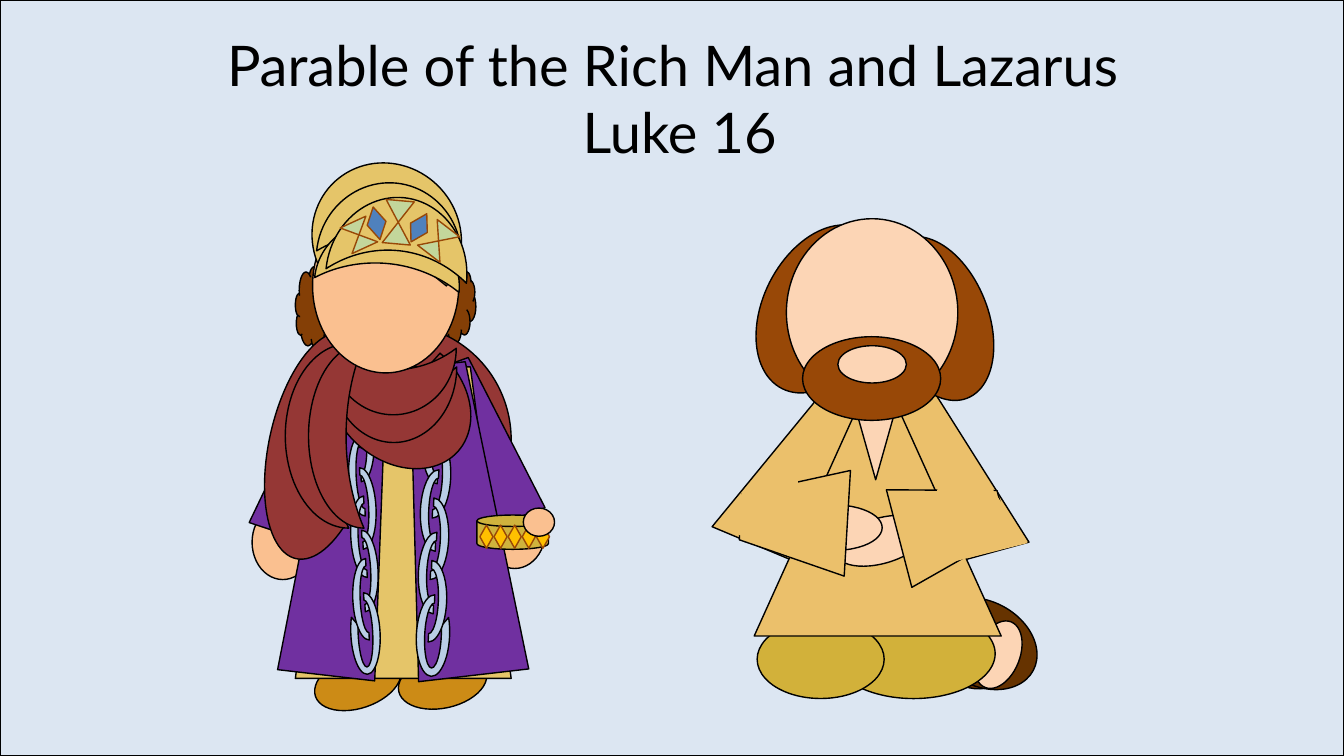
"""Build the title slide for the Parable of the Rich Man and Lazarus."""
from pptx import Presentation
from pptx.dml.color import RGBColor
from pptx.enum.shapes import MSO_SHAPE
from pptx.enum.text import PP_ALIGN
from pptx.util import Inches, Pt

OVAL, TRAPEZOID, TRIANGLE = MSO_SHAPE.OVAL, MSO_SHAPE.TRAPEZOID, MSO_SHAPE.ISOSCELES_TRIANGLE
MOON, PIE, ARC, CLOUD = MSO_SHAPE.MOON, MSO_SHAPE.PIE, MSO_SHAPE.BLOCK_ARC, MSO_SHAPE.CLOUD
DIAMOND, COLLATE = MSO_SHAPE.DIAMOND, MSO_SHAPE.FLOWCHART_COLLATE
DISK, RECTANGLE = MSO_SHAPE.FLOWCHART_MAGNETIC_DISK, MSO_SHAPE.RECTANGLE
CENTER = PP_ALIGN.CENTER

WIDTH, HEIGHT = 13.33, 7.5
THEME = {
    "sky": "DCE6F2", "ink": "000000", "trim": "984807", "curls": "843F06", "shoe": "CC8B16",
    "tan": "FAC090", "scarf": "953735", "purple": "7030A0", "linen": "E5C569", "silver": "B9CDE5",
    "lime": "C3D69B", "sapphire": "4F81BD", "brass": "CFB33D", "gold": "FFC000",
    "sandal": "663300", "skin": "FCD5B5", "tunic": "EBC06B", "knee": "D2B13A", "beard": "984807",
    "font": "Lato", "title_size": 40, "line_width": 1,
}
JEWELS = {"lime", "sapphire", "gold"}
TITLE_LINES = ["Parable of the Rich Man and Lazarus", " Luke 16"]
TITLE_BOX = (1.67, 0.25, 10, 1.45)

CRESCENT = {"adjust": [0.677]}
FLARE = {"adjust": [0.342]}
CUFF = {"adjust": [0.284]}
PATCH = {"adjust": [0.342], "outline": False}
MIRROR = {"mirror": True}

BODY = [
    (CLOUD, "curls", 2.93, 2.62, 0.43, 0.86, 0, {}),
    (CLOUD, "curls", 4.29, 2.69, 0.43, 0.72, 0, {}),
    (OVAL, "shoe", 4.13, 6.32, 0.52, 0.89, 77.7, {}),
    (OVAL, "shoe", 3.29, 6.32, 0.52, 0.89, 71.2, {}),
    (OVAL, "tan", 2.5, 5.01, 0.61, 0.74, 0, {}),
    (OVAL, "tan", 4.8, 4.9, 0.61, 0.74, 0, {}),
    (OVAL, "scarf", 2.76, 3.21, 2.31, 2.3, 0, {}),
    (TRAPEZOID, "purple", 4.3, 3.57, 0.85, 1.66, 340.2, {}),
    (TRAPEZOID, "purple", 2.71, 3.7, 0.85, 1.66, 18.3, {}),
    (TRAPEZOID, "linen", 2.93, 3.64, 2.14, 3.09, 0, {"adjust": [0.189]}),
]
RIGHT_ROBE = [(TRAPEZOID, "purple", 3.97, 3.61, 1.1, 3.1, 353.4, {})]
LEFT_ROBE = [(TRAPEZOID, "purple", 2.93, 3.59, 0.97, 3.12, 6.6, MIRROR)]
SCARF_AND_HEAD = [
    (TRAPEZOID, "tan", 3.58, 3.64, 0.68, 0.22, 180, {}),
    (PIE, "scarf", 3.35, 3.18, 1.22, 1.56, 311.6, {}),
    (MOON, "scarf", 3.53, 3.39, 0.75, 1.25, 270, CRESCENT),
    (MOON, "scarf", 3.57, 3.16, 0.66, 1.25, 270, CRESCENT),
    (PIE, "scarf", 2.67, 3.27, 1.03, 2.3, 12.5, {"adjust": [30.576, 162]}),
    (MOON, "scarf", 2.83, 3.41, 0.63, 1.83, 0, CRESCENT),
    (MOON, "scarf", 3.06, 3.41, 0.55, 1.83, 0, CRESCENT),
    (OVAL, "tan", 3.1, 1.97, 1.45, 1.73, 0, {}),
]
TURBAN = [
    (PIE, "linen", 3.11, 1.6, 1.45, 1.52, 137.5, {"adjust": [11.729, 156.797]}),
    (MOON, "linen", 3.52, 1.47, 0.75, 1.44, 95.9, CRESCENT),
    (MOON, "linen", 3.54, 1.78, 0.66, 1.44, 95.9, CRESCENT),
    (MOON, "linen", 3.58, 1.65, 0.78, 1.4, 95.9, CRESCENT),
    (COLLATE, "lime", 3.42, 2.19, 0.28, 0.28, 335.3, {}),
    (COLLATE, "lime", 4.21, 2.23, 0.28, 0.32, 37.5, {}),
    (COLLATE, "lime", 3.81, 1.99, 0.28, 0.43, 5.1, {}),
    (DIAMOND, "sapphire", 3.64, 2.05, 0.19, 0.33, 348.1, {}),
    (DIAMOND, "sapphire", 4.06, 2.1, 0.19, 0.32, 29.2, {}),
]
CUP = [(DISK, "brass", 4.73, 5.11, 0.71, 0.34, 0, {})]
CUP_GEMS = [(DIAMOND, "gold", 4.76 + 0.14 * i, 5.21, 0.13, 0.23, 0, {}) for i in range(5)]
THUMB = [(OVAL, "tan", 5.19, 5.04, 0.31, 0.28, 0, {})]

LAZARUS = [
    (OVAL, "sandal", 9.29, 6, 0.84, 0.83, 298.2, {}),
    (OVAL, "sandal", 9.33, 5.82, 0.84, 1.13, 298.2, {}),
    (OVAL, "skin", 9.55, 6.28, 0.7, 0.43, 291.5, {}),
    (TRAPEZOID, "tunic", 7.35, 3.8, 1.57, 1.8, 22.8, FLARE),
    (TRAPEZOID, "tunic", 8.35, 3.78, 1.64, 1.85, 344.6, FLARE | MIRROR),
    (OVAL, "knee", 8.25, 6.04, 1.62, 0.89, 0, {}),
    (OVAL, "knee", 7.51, 6.15, 1.26, 0.78, 0, {}),
    (TRIANGLE, "tunic", 7.48, 3.6, 2.45, 2.71, 0, {}),
    (OVAL, "beard", 8.43, 2.64, 1.7, 1.04, 68.3, {}),
    (OVAL, "beard", 7.27, 2.48, 1.77, 1.17, 116.7, {}),
    (OVAL, "skin", 8.27, 5.14, 0.94, 0.45, 343.8, {}),
    (OVAL, "skin", 7.81, 5.01, 0.94, 0.45, 0, {}),
    (TRIANGLE, "skin", 8.31, 3.43, 0.75, 1.33, 180, {}),
    (OVAL, "skin", 7.8, 2.17, 1.7, 1.86, 0, {}),
    (TRAPEZOID, "tunic", 7.35, 4.63, 1.05, 1.06, 273.4, CUFF),
    (TRAPEZOID, "tunic", 8.93, 4.68, 1, 1.06, 75.4, CUFF),
    (TRAPEZOID, "tunic", 7.25, 4.48, 0.79, 0.92, 22.8, PATCH),
    (TRAPEZOID, "tunic", 9.12, 4.72, 0.99, 0.8, 345.9, PATCH),
    (OVAL, "beard", 7.96, 3.34, 1.37, 0.83, 180, {}),
    (OVAL, "skin", 8.31, 3.43, 0.68, 0.37, 0, {}),
]

LINK_TOPS = [3.9, 4.23, 4.57, 4.9, 5.18, 5.52, 5.8, 6.14]
LINK_ORDER = [0, 1, 2, 3, 4, 5, 7, 6]
LINK_ENDS = {0: {"adjust": [24.165, 0, 0.25]}, 7: {"adjust": [22.948, 0, 0.25]}}


def chain(left, drift, shift, thickness, tilt, extras):
    """Return the links of one robe chain, alternately turned by half a circle."""
    return [
        (ARC, "silver", left + drift * (i // 2) + shift * (i % 2), LINK_TOPS[i], 0.81, thickness,
         (tilt + 180 * (i % 2)) % 360, LINK_ENDS.get(i, {}) | extras)
        for i in LINK_ORDER
    ]


def color(name):
    """Return a theme colour."""
    return RGBColor.from_string(THEME[name])


def draw(shapes, parts):
    """Add each part to a shape collection, from back to front."""
    for kind, fill, left, top, width, height, rotation, extras in parts:
        shape = shapes.add_shape(kind, *map(Inches, (left, top, width, height)))
        shape.shadow.inherit = False
        shape.rotation = rotation
        shape.fill.solid()
        shape.fill.fore_color.rgb = color(fill)
        if extras.get("outline", True):
            shape.line.color.rgb = color("trim" if fill in JEWELS else "ink")
            shape.line.width = Pt(THEME["line_width"])
        else:
            shape.line.fill.background()
        for index, value in enumerate(extras.get("adjust", [])):
            shape.adjustments[index] = value
        if extras.get("mirror"):
            shape._element.spPr.xfrm.set("flipH", "1")


def add_title(slide):
    """Add the centred title lines."""
    frame = slide.shapes.add_textbox(*map(Inches, TITLE_BOX)).text_frame
    frame.word_wrap = True
    font_format = {"name": THEME["font"], "size": Pt(THEME["title_size"])}
    for index, line in enumerate(TITLE_LINES):
        paragraph = frame.add_paragraph() if index else frame.paragraphs[0]
        paragraph.alignment = CENTER
        run = paragraph.add_run()
        run.text = line
        for name, value in font_format.items():
            setattr(run.font, name, value)
        run.font.color.rgb = color("ink")


def main():
    """Build and save the slide."""
    presentation = Presentation()
    presentation.slide_width, presentation.slide_height = Inches(WIDTH), Inches(HEIGHT)
    slide = presentation.slides.add_slide(presentation.slide_layouts[6])
    draw(slide.shapes, [(RECTANGLE, "sky", 0, 0, WIDTH, HEIGHT, 0, {})])
    right_chain = chain(3.92, -0.02, 0.03, 0.33, 92.6, {})
    left_chain = chain(3.18, 0.02, -0.02, 0.29, 267.4, MIRROR)
    rich_man = (BODY + RIGHT_ROBE + right_chain + LEFT_ROBE + left_chain
                + SCARF_AND_HEAD + TURBAN + CUP + CUP_GEMS + THUMB)
    draw(slide.shapes.add_group_shape().shapes, rich_man)
    add_title(slide)
    draw(slide.shapes.add_group_shape().shapes, LAZARUS)
    presentation.save("out.pptx")


if __name__ == "__main__":
    main()
